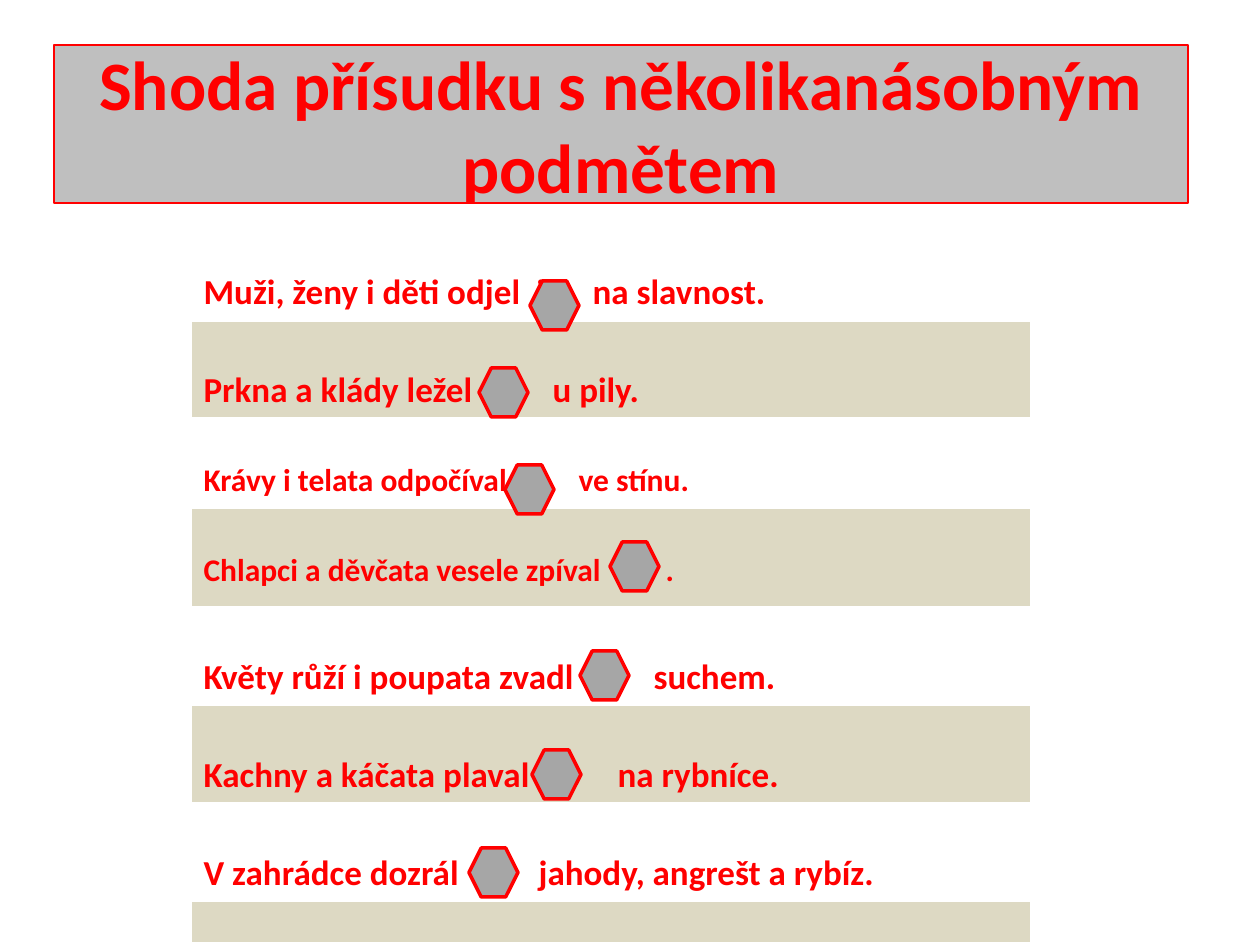
import lxml.etree
import pptx
import pptx.dml.color
import pptx.enum.shapes
import pptx.enum.text
import pptx.oxml.ns
import pptx.util

EMU_PER_PX = 914400 / 126
RED, WHITE, SAND = "FF0000", "FFFFFF", "DDD9C3"
SILVER, GREY = "BFBFBF", "A6A6A6"
PADDING = 6
TEXT_LEFT = 203
LINE_HEIGHT = {20: 43, 18: 38}


def px(length):
    return pptx.util.Emu(round(length * EMU_PER_PX))


def color(hex_string):
    return pptx.dml.color.RGBColor.from_string(hex_string)


def add_element(parent, tag, **attributes):
    element = lxml.etree.SubElement(parent, pptx.oxml.ns.qn(tag))
    for name, value in attributes.items():
        element.set(name, str(value))
    return element


class ExerciseSlide:
    font = "Calibri"

    def __init__(self, presentation):
        self.slide = presentation.slides.add_slide(presentation.slide_layouts[6])

    def set_text(self, paragraph, text, size):
        paragraph.text = text
        for run in paragraph.runs:
            run.font.name = self.font
            run.font.size = pptx.util.Pt(size)
            run.font.bold = True
            run.font.color.rgb = color(RED)

    def shape(self, kind, left, top, width, height, fill, line_width):
        shape = self.slide.shapes.add_shape(
            kind, px(left), px(top), px(width), px(height))
        shape.shadow.inherit = False
        shape.fill.solid()
        shape.fill.fore_color.rgb = color(fill)
        shape.line.color.rgb = color(RED)
        shape.line.width = pptx.util.Pt(line_width)
        return shape

    def title(self, text, left, top, width, height):
        banner = self.shape(pptx.enum.shapes.MSO_SHAPE.RECTANGLE,
                            left, top, width, height, SILVER, 0.75)
        frame = banner.text_frame
        frame.word_wrap = True
        frame.vertical_anchor = pptx.enum.text.MSO_ANCHOR.MIDDLE
        self.set_text(frame.paragraphs[0], text, 39.6)
        frame.paragraphs[0].alignment = pptx.enum.text.PP_ALIGN.CENTER

    def cover(self, left, top, size=49):
        self.shape(pptx.enum.shapes.MSO_SHAPE.HEXAGON, left, top, size, size, GREY, 2)

    def border(self, cell, bottom_width):
        properties = cell._tc.get_or_add_tcPr()
        sides = {"a:lnL": 1, "a:lnR": 1, "a:lnT": 1, "a:lnB": bottom_width}
        for position, (tag, width) in enumerate(sides.items()):
            line = add_element(properties, tag, w=pptx.util.Pt(width))
            add_element(add_element(line, "a:solidFill"), "a:srgbClr", val=WHITE)
            properties.insert(position, line)

    def sentence(self, cell, words, size, stops):
        cell.margin_top = px(PADDING + LINE_HEIGHT[size])
        cell.margin_bottom = px(PADDING)
        paragraph = cell.text_frame.paragraphs[0]
        self.set_text(paragraph, "\t".join(words), size)
        tabs = add_element(paragraph._p.get_or_add_pPr(), "a:tabLst")
        for stop in stops:
            add_element(tabs, "a:tab", pos=px(stop - TEXT_LEFT), algn="l")

    def table(self, left, top, width, heights, sentences):
        table = self.slide.shapes.add_table(
            len(heights), 1, px(left), px(top), px(width), px(sum(heights))).table
        table.columns[0].width = px(width)
        for index, height in enumerate(heights):
            table.rows[index].height = px(height)
            cell = table.cell(index, 0)
            cell.fill.solid()
            cell.fill.fore_color.rgb = color(SAND if index % 2 else WHITE)
            self.border(cell, 1 if index else 3)
            if index < len(sentences):
                self.sentence(cell, *sentences[index])
            else:
                cell.margin_top = cell.margin_bottom = 0


def main():
    presentation = pptx.Presentation()
    presentation.slide_width = px(1260)
    presentation.slide_height = px(945)
    exercise = ExerciseSlide(presentation)
    exercise.title("Shoda přísudku s několikanásobným podmětem", 54, 45, 1134, 158)

    sentences = [
        (("Muži, ženy i děti odjel", "i", "na slavnost."), 20, (536, 592)),
        (("Prkna a klády ležel", "y", "u pily."), 20, (495, 552)),
        (("Krávy i telata odpočíval", "y", "ve stínu."), 18, (528, 578)),
        (("Chlapci a děvčata vesele zpíval", "i", "."), 18, (621, 665)),
        (("Květy růží i poupata zvadl", "y", "suchem."), 20, (597, 653)),
        (("Kachny a káčata plaval", "y", "na rybníce."), 20, (553, 617)),
        (("V zahrádce dozrál", "y", "jahody, angrešt a rybíz."), 20, (482, 538)),
    ]
    exercise.table(191, 222, 840, [98, 98, 90, 99, 98, 98, 98, 42], sentences)

    for left, top in [(530, 281), (479, 368), (505, 465), (610, 542),
                      (580, 651), (532, 750), (469, 848)]:
        exercise.cover(left, top)
    presentation.save("out.pptx")


if __name__ == "__main__":
    main()
